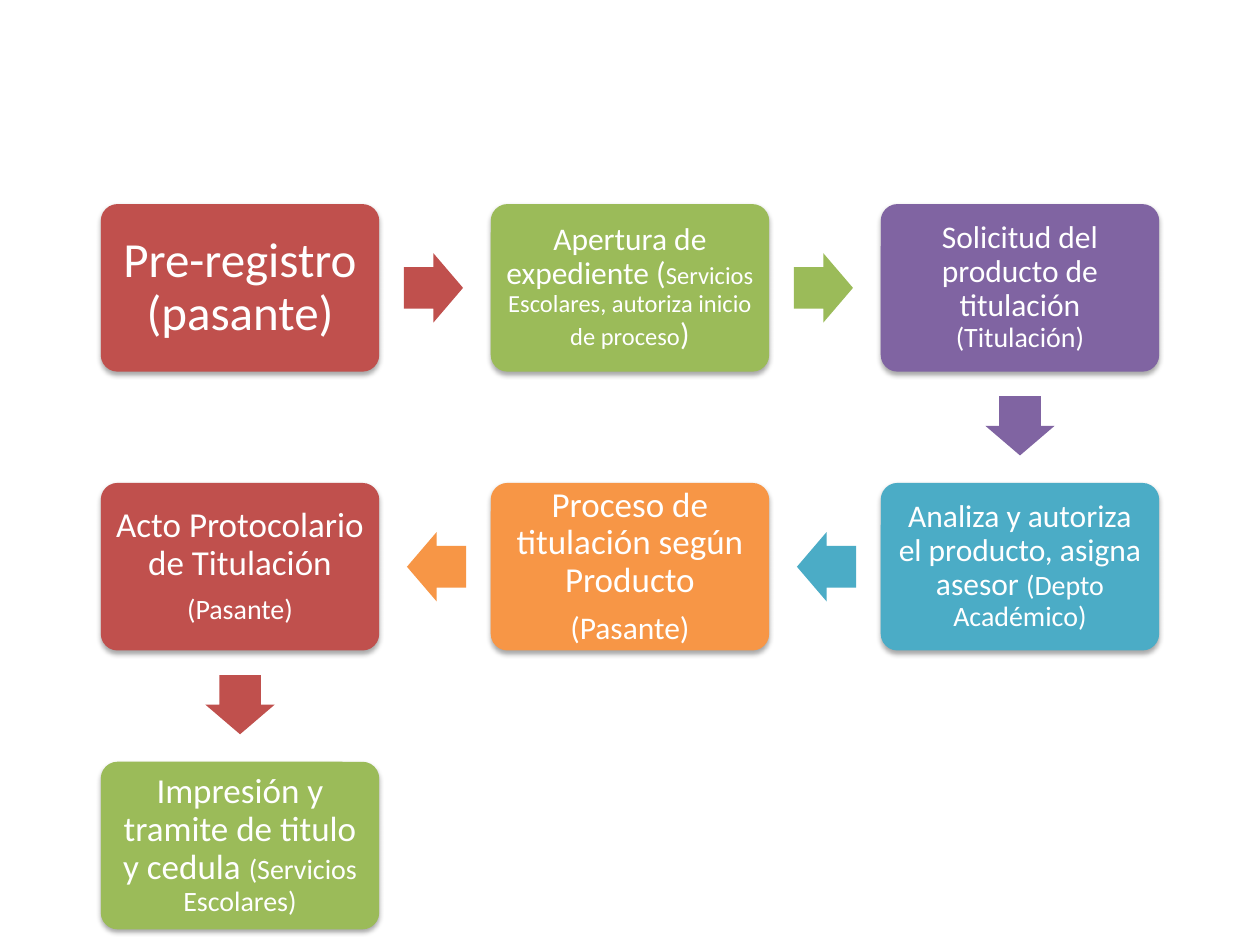
"""Draw the degree process as a snake of seven linked steps."""
from lxml import etree
from pptx import Presentation
from pptx import util as u
from pptx.dml.color import RGBColor
from pptx.enum import shapes, text
from pptx.oxml import ns

RED = RGBColor(0xC0, 0x50, 0x4D)
GREEN = RGBColor(0x9B, 0xBB, 0x59)
PURPLE = RGBColor(0x80, 0x64, 0xA2)
TEAL = RGBColor(0x4B, 0xAC, 0xC6)
ORANGE = RGBColor(0xF7, 0x96, 0x46)
WHITE = RGBColor(0xFF, 0xFF, 0xFF)

LEFT, TOP = 0.8, 1.62
COL, ROW = 3.095, 2.213
BOX_W, BOX_H = 2.21, 1.33
ARROW_W, ARROW_H = 0.47, 0.55
GAP = 0.43
TURN = {(1, 0): 0, (0, 1): 90, (-1, 0): 180}

STEPS = [
    (0, 0, RED, 0.12, [[("Pre-registro (pasante)", 28)]]),
    (1, 0, GREEN, 0.07, [[("Apertura de expediente (", 18),
                          ("Servicios Escolares, autoriza inicio de proceso", 14),
                          (")", 18)]]),
    (2, 0, PURPLE, 0.07, [[("Solicitud del producto de titulación ", 18),
                           ("(Titulación)", 16)]]),
    (2, 1, TEAL, 0.07, [[("Analiza y autoriza el producto, asigna asesor ", 18),
                         ("(Depto Académico)", 16)]]),
    (1, 1, ORANGE, 0.08, [[("Proceso de titulación según Producto", 20)],
                          [("(Pasante)", 18)]]),
    (0, 1, RED, 0.08, [[("Acto Protocolario de Titulación", 20)],
                       [("(Pasante)", 16)]]),
    (0, 2, GREEN, 0.08, [[("Impresión y tramite de titulo y cedula ", 20),
                          ("(Servicios Escolares)", 16)]]),
]


def add_form(slide, kind, mid, size, color):
    """Add a plain filled shape centred on a point."""
    (x, y), (w, h) = mid, size
    form = slide.shapes.add_shape(kind, u.Inches(x - w / 2), u.Inches(y - h / 2),
                                  u.Inches(w), u.Inches(h))
    form.shadow.inherit = False
    form.fill.solid()
    form.fill.fore_color.rgb = color
    form.line.fill.background()
    return form


def add_shade(form):
    """Give a shape a soft black shadow straight below it."""
    list_el = form._element.spPr.find(ns.qn("a:effectLst"))
    shade = etree.SubElement(list_el, ns.qn("a:outerShdw"), blurRad=str(u.Pt(3.1)),
                             dist=str(u.Pt(1.8)), dir="5400000", rotWithShape="0")
    black = etree.SubElement(shade, ns.qn("a:srgbClr"), val="000000")
    etree.SubElement(black, ns.qn("a:alpha"), val="35000")


def add_text(form, paras, inset):
    """Fill a shape with centred white text, run by run."""
    frame = form.text_frame
    frame.word_wrap = True
    frame.vertical_anchor = text.MSO_ANCHOR.MIDDLE
    for side in ("left", "right", "top", "bottom"):
        setattr(frame, f"margin_{side}", u.Inches(inset))
    for i, runs in enumerate(paras):
        para = frame.add_paragraph() if i else frame.paragraphs[0]
        para.alignment = text.PP_ALIGN.CENTER
        para.line_spacing = 0.9
        para.space_after = u.Pt(0.35 * runs[0][1])
        for words, size in runs:
            run = para.add_run()
            run.text = words
            run.font.name = "Calibri"
            run.font.size = u.Pt(size)
            run.font.color.rgb = WHITE


def add_step(slide, mid, color, inset, paras):
    """Add one rounded step box with its text."""
    box = add_form(slide, shapes.MSO_SHAPE.ROUNDED_RECTANGLE, mid,
                   (BOX_W, BOX_H), color)
    box.adjustments[0] = 0.1
    add_shade(box)
    add_text(box, paras, inset)


def add_arrow(slide, mid, way, color):
    """Add a block arrow that leaves a step towards the next one."""
    dx, dy = way
    spot = (mid[0] + dx * (BOX_W / 2 + GAP), mid[1] + dy * (BOX_H / 2 + GAP))
    arrow = add_form(slide, shapes.MSO_SHAPE.RIGHT_ARROW, spot,
                     (ARROW_W, ARROW_H), color)
    arrow.adjustments[0] = 0.6
    arrow.adjustments[1] = 0.5
    arrow.rotation = TURN[way]


def main():
    """Build the slide and save it."""
    deck = Presentation()
    deck.slide_width, deck.slide_height = u.Inches(10), u.Inches(7.5)
    slide = deck.slides.add_slide(deck.slide_layouts[6])
    for i, (col, row, color, inset, paras) in enumerate(STEPS):
        mid = (LEFT + BOX_W / 2 + col * COL, TOP + BOX_H / 2 + row * ROW)
        add_step(slide, mid, color, inset, paras)
        for after in STEPS[i + 1:i + 2]:
            add_arrow(slide, mid, (after[0] - col, after[1] - row), color)
    deck.save("out.pptx")


if __name__ == "__main__":
    main()
